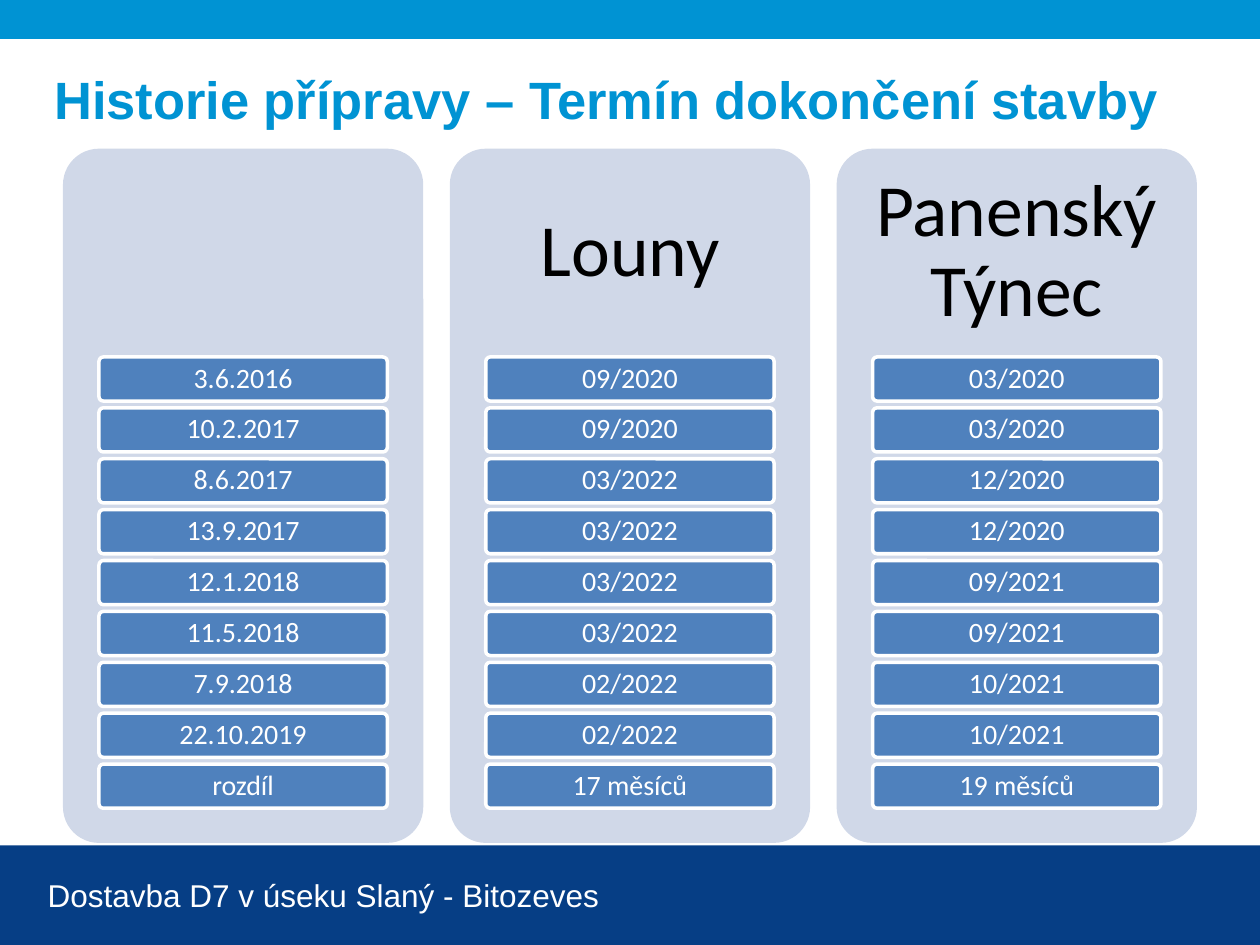
from pptx import Presentation
from pptx.dml.color import RGBColor
from pptx.enum.shapes import MSO_SHAPE
from pptx.enum.text import MSO_ANCHOR, PP_ALIGN
from pptx.util import Inches, Pt

# Content
TITLE = "Historie přípravy – Termín dokončení stavby"
FOOTER = "Dostavba D7 v úseku Slaný - Bitozeves"
COLUMNS = [
    ("", ["3.6.2016", "10.2.2017", "8.6.2017", "13.9.2017", "12.1.2018",
          "11.5.2018", "7.9.2018", "22.10.2019", "rozdíl"]),
    ("Louny", ["09/2020", "09/2020", "03/2022", "03/2022", "03/2022",
               "03/2022", "02/2022", "02/2022", "17 měsíců"]),
    ("Panenský Týnec", ["03/2020", "03/2020", "12/2020", "12/2020", "09/2021",
                        "09/2021", "10/2021", "10/2021", "19 měsíců"]),
]
COLORS = {"sky": "0093D3", "navy": "063E85", "panel": "D0D8E8",
          "entry": "4F81BD", "white": "FFFFFF", "black": "000000"}

# Grid, in inches
WIDTH, HEIGHT = 10, 7.5
LEFT, TOP, SPAN, PANEL_HEIGHT = 0.5, 1.18, 9, 5.51
PANEL_WIDTH = 2.86
PANEL_STEP = (SPAN - PANEL_WIDTH) / (len(COLUMNS) - 1)
HEADING_HEIGHT = 0.3 * PANEL_HEIGHT
ENTRIES_HEIGHT = 0.65 * PANEL_HEIGHT
ENTRY_WIDTH = 0.8 * PANEL_WIDTH
ENTRY_HEIGHT = 0.35


def color(name):
    return RGBColor.from_string(COLORS[name])


def write(box, text, *, size, fill, font="Calibri", bold=False,
          align=PP_ALIGN.CENTER, anchor=MSO_ANCHOR.MIDDLE,
          margins=(0.1, 0.05), line_spacing=None):
    frame = box.text_frame
    frame.word_wrap = True
    frame.vertical_anchor = anchor
    frame.margin_left = frame.margin_right = Inches(margins[0])
    frame.margin_top = frame.margin_bottom = Inches(margins[1])
    para = frame.paragraphs[0]
    para.alignment = align
    if line_spacing:
        para.line_spacing = line_spacing
    span = para.add_run()
    span.text = text
    span.font.name = font
    span.font.size = Pt(size)
    span.font.bold = bold
    span.font.color.rgb = color(fill)


def add_block(page, kind, left, top, width, height, fill, line=None):
    block = page.shapes.add_shape(kind, Inches(left), Inches(top),
                                  Inches(width), Inches(height))
    block.shadow.inherit = False
    block.fill.solid()
    block.fill.fore_color.rgb = color(fill)
    if line:
        block.line.color.rgb = color(line)
        block.line.width = Pt(2)
    else:
        block.line.fill.background()
    if kind == MSO_SHAPE.ROUNDED_RECTANGLE:
        block.adjustments[0] = 0.1
    return block


def add_text_box(page, left, top, width, height):
    return page.shapes.add_textbox(Inches(left), Inches(top),
                                   Inches(width), Inches(height))


def add_column(page, left, heading, entries):
    add_block(page, MSO_SHAPE.ROUNDED_RECTANGLE, left, TOP,
              PANEL_WIDTH, PANEL_HEIGHT, "panel")
    if heading:
        box = add_text_box(page, left, TOP, PANEL_WIDTH, HEADING_HEIGHT)
        write(box, heading, size=42, fill="black", margins=(0.17, 0.17),
              line_spacing=0.9)
    step = (ENTRIES_HEIGHT - ENTRY_HEIGHT) / (len(entries) - 1)
    entry_left = left + (PANEL_WIDTH - ENTRY_WIDTH) / 2
    for row, entry in enumerate(entries):
        block = add_block(page, MSO_SHAPE.ROUNDED_RECTANGLE, entry_left,
                          TOP + HEADING_HEIGHT + row * step,
                          ENTRY_WIDTH, ENTRY_HEIGHT, "entry", line="white")
        write(block, entry, size=16, fill="white", margins=(0.04, 0.03),
              line_spacing=0.9)


def main():
    deck = Presentation()
    deck.slide_width, deck.slide_height = Inches(WIDTH), Inches(HEIGHT)
    page = deck.slides.add_slide(deck.slide_layouts[5])

    # Bands at top and bottom
    add_block(page, MSO_SHAPE.RECTANGLE, 0, 0, WIDTH, 0.31, "sky")
    add_block(page, MSO_SHAPE.RECTANGLE, 0, 6.71, WIDTH, HEIGHT - 6.71, "navy")

    # Title and footer
    title = page.shapes.title
    title.left, title.top = Inches(0.33), Inches(0.4)
    title.width, title.height = Inches(9.17), Inches(0.77)
    write(title, TITLE, size=30, fill="sky", font="Arial", bold=True,
          align=PP_ALIGN.LEFT)
    footer = add_text_box(page, 0.28, 6.9, 6.41, 0.4)
    write(footer, FOOTER, size=18, fill="white", font="Arial",
          align=PP_ALIGN.LEFT, anchor=MSO_ANCHOR.TOP)

    # Columns of dates
    for index, (heading, entries) in enumerate(COLUMNS):
        add_column(page, LEFT + index * PANEL_STEP, heading, entries)

    deck.save("out.pptx")


if __name__ == "__main__":
    main()
